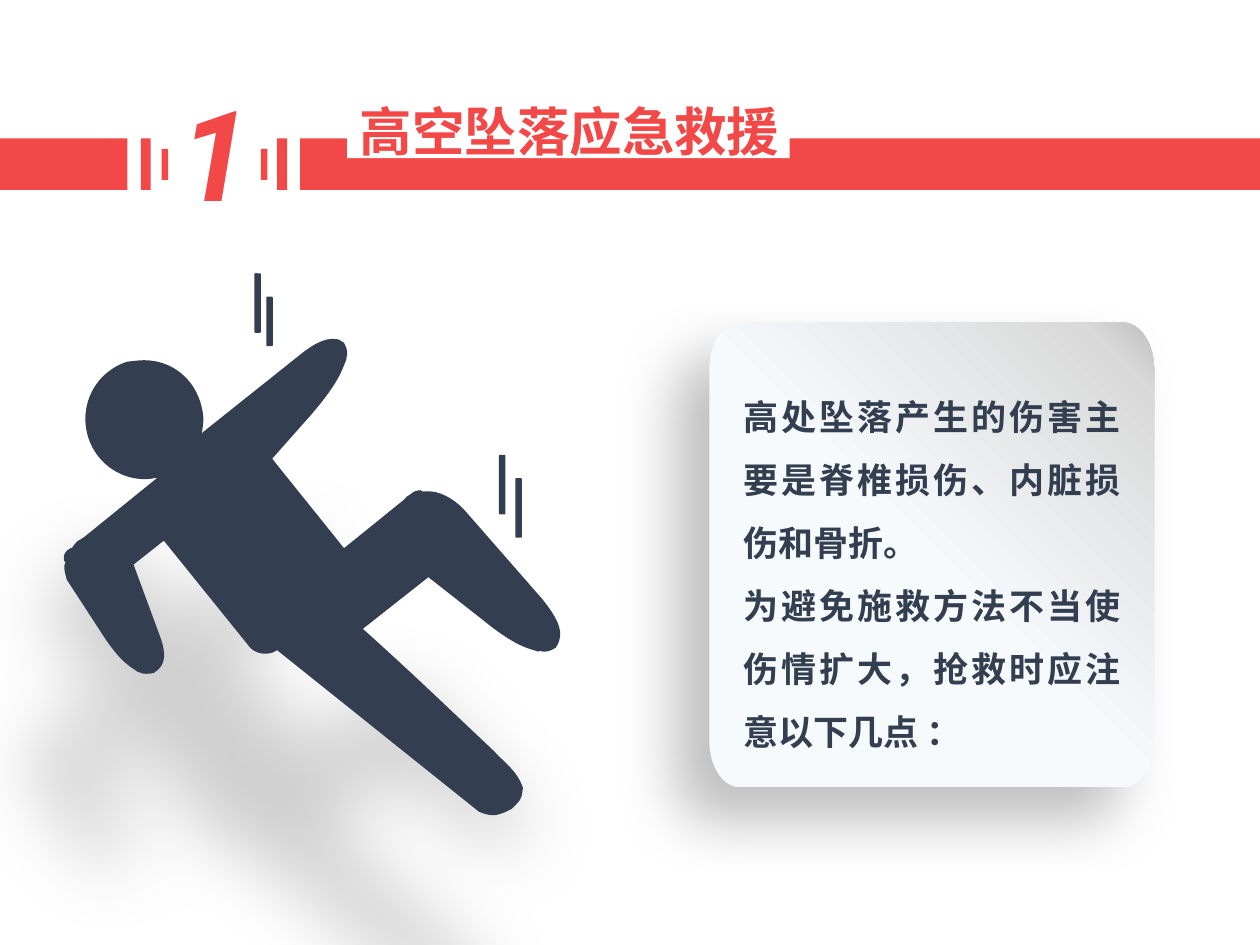
import math
import pptx
import pptx.util
import pptx.oxml
import pptx.oxml.ns
import pptx.dml.color
import pptx.enum.shapes
import pptx.enum.text

Cm, Pt = pptx.util.Cm, pptx.util.Pt
RGB = pptx.dml.color.RGBColor.from_string
RECT = pptx.enum.shapes.MSO_SHAPE.RECTANGLE
ROUND = pptx.enum.shapes.MSO_SHAPE.ROUNDED_RECTANGLE
ALIGN = pptx.enum.text.PP_ALIGN
NS = pptx.oxml.ns.nsdecls("a")
qn = pptx.oxml.ns.qn
COLORS = {"red": "F24848", "navy": "333F50", "white": "FFFFFF", "black": "000000",
          "ice": "F7FAFD", "silver": "D9D9D9", "gray": "BFBFBF"}

prs = pptx.Presentation()
prs.slide_width, prs.slide_height = Cm(25.4), Cm(19.05)
s = prs.slides.add_slide(prs.slide_layouts[6])


def add_text(text, box, size, color, font, italic=False, wrap=True,
             align=ALIGN.LEFT, spacing=1.0):
    tf = s.shapes.add_textbox(*map(Cm, box)).text_frame
    tf.word_wrap = wrap
    tf.auto_size = pptx.enum.text.MSO_AUTO_SIZE.SHAPE_TO_FIT_TEXT
    tf.text = text
    for p in tf.paragraphs:
        p.alignment, p.line_spacing = align, spacing
        r = p.runs[0]
        r.font.name, r.font.size = font, Pt(size)
        r.font.bold, r.font.italic = True, italic
        r.font.color.rgb = RGB(COLORS[color])


def add_outline(outline, box, rotation, shadow):
    """Outline in 0.01 inch on the slide: a pair is a line, three pairs a curve."""
    left, top, width, height = map(Cm, box)
    cx, cy = left + width / 2, top + height / 2
    cos, sin = math.cos(math.radians(rotation)), math.sin(math.radians(rotation))
    segments = []
    for seg in outline:
        pts = []
        for x, y in zip(seg[::2], seg[1::2]):
            dx, dy = x * Cm(2.54) / 100 - cx, y * Cm(2.54) / 100 - cy
            pts.append((round(dx * cos + dy * sin + width / 2),
                        round(dy * cos - dx * sin + height / 2)))
        segments.append(pts)
    fb = s.shapes.build_freeform(*segments[0][-1])
    fb.add_line_segments([pts[-1] for pts in segments[1:]], close=True)
    sp = fb.convert_to_shape()
    sp.left, sp.top, sp.width, sp.height = left, top, width, height
    # Put the outline in the frame of its box and bend the curved segments
    path = next(sp._element.iter(qn("a:path")))
    path.set("w", str(width))
    path.set("h", str(height))
    for old, pts in zip(list(path), segments):
        tag = "moveTo" if pts is segments[0] else "lnTo" if len(pts) == 1 else "cubicBezTo"
        xy = "".join(f'<a:pt x="{x}" y="{y}"/>' for x, y in pts)
        path.replace(old, pptx.oxml.parse_xml(f"<a:{tag} {NS}>{xy}</a:{tag}>"))
    sp.rotation = rotation
    sp.line.fill.background()
    sp.shadow.inherit = False
    alpha, blur, dist, angle = shadow
    sp._element.spPr.find(qn("a:effectLst")).append(pptx.oxml.parse_xml(
        f'<a:outerShdw {NS} blurRad="{Pt(blur)}" dist="{Pt(dist)}" '
        f'dir="{angle * 60000}" algn="ctr" rotWithShape="0">'
        f'<a:srgbClr val="{COLORS["black"]}"><a:alpha val="{alpha * 1000}"/>'
        f'</a:srgbClr></a:outerShdw>'))
    return sp


# Header band, title backing, bars beside the number, motion lines
for kind, color, box in [
        (RECT, "red", (6.05, 2.79, 19.35, 1.04)),
        (RECT, "white", (7, 1.6, 8.92, 1.59)),
        (RECT, "red", (0, 2.79, 2.57, 1.04)),
        (RECT, "red", (2.84, 2.79, 0.2, 1.04)),
        (RECT, "red", (5.59, 2.79, 0.2, 1.04)),
        (RECT, "red", (3.26, 3, 0.13, 0.63)),
        (RECT, "red", (5.26, 3, 0.13, 0.63)),
        (ROUND, "navy", (5.13, 5.51, 0.13, 1.2)),
        (ROUND, "navy", (5.37, 5.98, 0.13, 1)),
        (ROUND, "navy", (10.06, 9.17, 0.13, 1.2)),
        (ROUND, "navy", (10.39, 9.64, 0.13, 1.2))]:
    sp = s.shapes.add_shape(kind, *map(Cm, box))
    sp.shadow.inherit = False
    sp.fill.solid()
    sp.fill.fore_color.rgb = RGB(COLORS[color])
    sp.line.fill.background()

# Title and number
add_text("高空坠落应急救援", (7, 1.88, 9.22, 1.55), 30, "red", "Calibri")
add_text("1", (3.38, 1.4, 2.01, 3.33), 72, "red", "Roboto", italic=True, wrap=False)

# Panel with gradient
panel = [
    (563, 293), (563, 273, 574, 256, 588, 256), (891, 256),
    (905, 256, 916, 273, 916, 293), (916, 588),
    (916, 609, 905, 625, 891, 625), (588, 625),
    (574, 625, 563, 609, 563, 588)]
sp = add_outline(panel, (14.3, 6.51, 8.97, 9.37), 0, (25, 35, 27, 135))
stops = "".join(f'<a:gs pos="{pos * 1000}"><a:srgbClr val="{COLORS[name]}"/></a:gs>'
                for pos, name in [(49, "ice"), (92, "silver"), (100, "gray")])
sp.line._ln.addprevious(pptx.oxml.parse_xml(
    f'<a:gradFill {NS} rotWithShape="1"><a:gsLst>{stops}</a:gsLst>'
    f'<a:lin ang="{315 * 60000}" scaled="0"/></a:gradFill>'))
add_text("高处坠落产生的伤害主要是脊椎损伤、内脏损伤和骨折。\n"
         "为避免施救方法不当使伤情扩大，抢救时应注意以下几点 ：",
         (14.73, 7.42, 8.1, 7.95), 20, "navy", "DejaVu Sans",
         align=ALIGN.JUSTIFY, spacing=1.5)

# Falling man
falling_man = [
    # Raised arm and back
    (266, 269), (268, 269, 271, 270, 273, 272), (278, 281, 274, 284, 275, 285),
    (271, 294, 270, 302, 247, 329), (216, 364), (273, 435),
    # Bent leg
    (320, 397), (321, 396), (323, 394), (326, 392), (328, 390, 331, 389, 334, 389),
    (335, 390), (338, 390), (348, 389, 359, 395, 368, 404), (430, 475),
    (443, 491, 449, 503, 441, 514), (432, 520, 428, 515, 427, 517),
    (418, 514, 409, 513, 382, 491), (340, 458), (288, 499),
    # Straight leg
    (299, 509), (330, 537, 356, 562, 392, 596), (400, 605, 410, 611, 415, 625),
    (414, 635, 413, 635, 406, 642), (396, 647, 391, 649, 380, 644),
    (220, 516), (216, 518), (209, 520, 201, 518, 197, 512), (130, 429),
    # Lower arm
    (106, 448), (127, 505), (132, 519, 132, 528, 122, 534),
    (112, 536, 111, 533, 109, 533), (104, 529, 97, 527, 83, 506), (53, 460),
    (52, 456, 51, 453, 51, 449), (52, 446), (51, 445),
    (50, 442, 51, 439, 53, 437), (56, 435), (57, 435),
    (59, 432, 61, 429, 64, 428), (67, 426), (125, 379),
    # Head and shoulder
    (119, 380), (98, 382, 77, 369, 70, 347), (62, 321, 76, 295, 101, 287),
    (104, 287, 107, 286, 110, 286), (132, 284, 152, 297, 159, 319),
    (161, 326, 162, 332, 161, 338), (160, 345), (161, 343), (235, 284),
    (247, 274, 257, 268, 266, 269)]
sp = add_outline(falling_man, (0.51, 7.72, 11.91, 7.77), 220, (19, 45, 114, 100))
sp.fill.solid()
sp.fill.fore_color.rgb = RGB(COLORS["navy"])

prs.save("out.pptx")
